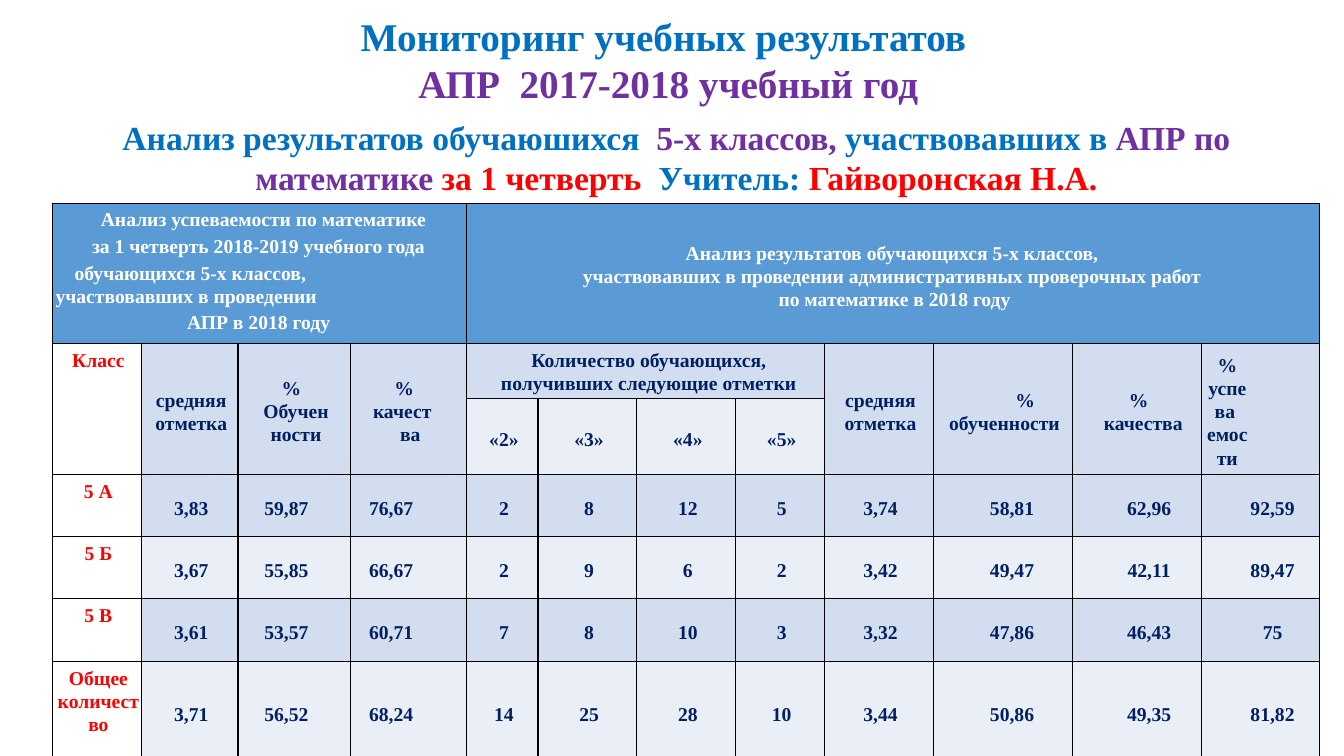
"""Builds the slide with the monitoring table of the fifth-form maths tests."""
from dataclasses import dataclass

from lxml.etree import SubElement
from pptx import Presentation
from pptx.dml.color import RGBColor as Rgb
from pptx.enum.text import MSO_ANCHOR as Anchor, MSO_AUTO_SIZE as AutoSize, PP_ALIGN as Align
from pptx.oxml.ns import qn
from pptx.util import Cm, Pt


@dataclass(frozen=True)
class Theme:
    font: str = "Times New Roman"
    title_size: int = 28
    subtitle_size: int = 24
    table_size: int = 14
    line_spacing: float = 1.07
    blue: str = "0070C0"
    purple: str = "7030A0"
    red: str = "FF0000"
    navy: str = "002060"
    white: str = "FFFFFF"
    header: str = "5B9BD5"
    dark_band: str = "D2DEEF"
    light_band: str = "EAEFF7"
    border: str = "000000"


@dataclass(frozen=True)
class Line:
    text: str
    align: Align = Align.CENTER
    left: float = 0
    first: float = 0
    right: float = 0
    after: float = 0
    spacing: float = Theme.line_spacing


class SlideBuilder:
    def __init__(self, slide, theme):
        self.slide = slide
        self.theme = theme

    def add_run(self, paragraph, text, size, color):
        run = paragraph.add_run()
        run.text = text
        run.font.name = self.theme.font
        run.font.size = Pt(size)
        run.font.bold = True
        run.font.color.rgb = Rgb.from_string(color)

    def fill_heading(self, heading, box, size, lines):
        heading.left, heading.top, heading.width, heading.height = map(Cm, box)
        frame = heading.text_frame
        frame.word_wrap = True
        frame.auto_size = AutoSize.SHAPE_TO_FIT_TEXT
        frame.vertical_anchor = Anchor.TOP
        for index, parts in enumerate(lines):
            paragraph = frame.add_paragraph() if index else frame.paragraphs[0]
            paragraph.alignment = Align.CENTER
            for text, color in parts:
                self.add_run(paragraph, text, size, color)

    def title(self, box, lines):
        self.fill_heading(self.slide.shapes.title, box, self.theme.title_size, lines)

    def subtitle(self, box, parts):
        heading = self.slide.shapes.add_textbox(*map(Cm, box))
        self.fill_heading(heading, box, self.theme.subtitle_size, [parts])

    def table(self, left, top, widths, heights):
        frame = self.slide.shapes.add_table(
            len(heights), len(widths), Cm(left), Cm(top), Cm(sum(widths)), Cm(sum(heights)))
        grid = frame.table
        for column, width in zip(grid.columns, widths):
            column.width = Cm(width)
        for row, height in zip(grid.rows, heights):
            row.height = Cm(height)
        for cell in grid.iter_cells():
            self.border(cell)
        return grid

    def border(self, cell):
        properties = cell._tc.get_or_add_tcPr()
        for side in ("a:lnL", "a:lnR", "a:lnT", "a:lnB"):
            edge = SubElement(properties, qn(side), w=str(Pt(1)))
            paint = SubElement(edge, qn("a:solidFill"))
            SubElement(paint, qn("a:srgbClr"), val=self.theme.border)

    def cell(self, cell, lines, fill, color, anchor=Anchor.MIDDLE):
        cell.fill.solid()
        cell.fill.fore_color.rgb = Rgb.from_string(fill)
        cell.vertical_anchor = anchor
        cell.margin_left, cell.margin_top = Cm(0.08), Cm(0.13)
        cell.margin_right = cell.margin_bottom = 0
        for index, line in enumerate(lines):
            paragraph = cell.text_frame.add_paragraph() if index else cell.text_frame.paragraphs[0]
            paragraph.alignment = line.align
            paragraph.line_spacing = line.spacing
            paragraph.space_after = Pt(line.after)
            properties = paragraph._p.get_or_add_pPr()
            for name, length in (("marL", line.left), ("marR", line.right), ("indent", line.first)):
                properties.set(name, str(Cm(length)))
            self.add_run(paragraph, line.text, self.theme.table_size, color)


WIDTHS = [2.24, 2.44, 2.84, 2.92, 1.8, 2.49, 2.49, 2.24, 2.74, 3.51, 3.25, 2.97]
HEIGHTS = [2.01, 1.12, 1.4, 1.57, 1.57, 1.57, 2.54]

PROGRESS = [
    Line("Анализ успеваемости по математике", Align.JUSTIFY, 2.13, -0.99, after=2.4, spacing=1.03),
    Line("за 1 четверть 2018-2019 учебного года ", after=2.6),
    Line("обучающихся 5-х классов,", Align.LEFT, 0.48),
    Line("участвовавших в проведении ", Align.JUSTIFY, after=1.8),
    Line("АПР в 2018 году "),
]
TEST_RESULTS = [
    Line("Анализ результатов обучающихся 5-х классов, "),
    Line("участвовавших в проведении административных проверочных работ "),
    Line("по математике в 2018 году"),
]
AVERAGE = [Line("средняя отметка")]
PERCENT = Line("%", Align.LEFT, 1.02)
TALL_HEADERS = {
    1: AVERAGE,
    2: [PERCENT, Line("Обучен"), Line("ности")],
    3: [PERCENT, Line("качест", Align.LEFT, 0.48), Line("ва")],
    8: AVERAGE,
    9: [Line("%", left=1.04), Line("обученности")],
    10: [Line("%"), Line("качества", left=0.23)],
    11: [Line(text, right=1.75) for text in ("%", "успева ", "емости")],
}
MARKS = ["«2»", "«3»", "«4»", "«5»"]
VALUE_LAYOUT = {
    2: {"align": Align.LEFT, "left": 0.58},
    3: {"align": Align.LEFT, "left": 0.38},
    9: {"left": 0.38},
    10: {"left": 0.53},
    11: {"left": 0.53},
}
RESULTS = [
    ("5 А", "3,83", "59,87", "76,67", "2", "8", "12", "5", "3,74", "58,81", "62,96", "92,59"),
    ("5 Б", "3,67", "55,85", "66,67", "2", "9", "6", "2", "3,42", "49,47", "42,11", "89,47"),
    ("5 В", "3,61", "53,57", "60,71", "7", "8", "10", "3", "3,32", "47,86", "46,43", "75"),
    ("Общее количество", "3,71", "56,52", "68,24", "14", "25", "28", "10", "3,44", "50,86",
     "49,35", "81,82"),
]


def fill_results(builder, grid):
    theme = builder.theme
    for first, last, lines in ((0, 3, PROGRESS), (4, 11, TEST_RESULTS)):
        grid.cell(0, first).merge(grid.cell(0, last))
        anchor = Anchor.MIDDLE if first else Anchor.TOP
        builder.cell(grid.cell(0, first), lines, theme.header, theme.white, anchor)
    for column in (0, *TALL_HEADERS):
        grid.cell(1, column).merge(grid.cell(2, column))
    builder.cell(grid.cell(1, 0), [Line("Класс")], theme.white, theme.red, Anchor.TOP)
    for column, lines in TALL_HEADERS.items():
        builder.cell(grid.cell(1, column), lines, theme.dark_band, theme.navy)
    grid.cell(1, 4).merge(grid.cell(1, 7))
    mark_counts = [Line("Количество обучающихся, получивших следующие отметки", left=0.08)]
    builder.cell(grid.cell(1, 4), mark_counts, theme.dark_band, theme.navy, Anchor.TOP)
    for column, mark in enumerate(MARKS, 4):
        builder.cell(grid.cell(2, column), [Line(mark)], theme.light_band, theme.navy)
    for row, (group, *values) in enumerate(RESULTS, 3):
        builder.cell(grid.cell(row, 0), [Line(group)], theme.white, theme.red, Anchor.TOP)
        band = theme.dark_band if row % 2 else theme.light_band
        for column, value in enumerate(values, 1):
            line = Line(value, **VALUE_LAYOUT.get(column, {}))
            builder.cell(grid.cell(row, column), [line], band, theme.navy)


def main():
    deck = Presentation()
    deck.slide_width, deck.slide_height = Cm(33.87), Cm(19.05)
    theme = Theme()
    builder = SlideBuilder(deck.slides.add_slide(deck.slide_layouts[5]), theme)
    builder.title((2.34, 0.18, 29, 2.64), [
        [("Мониторинг учебных результатов ", theme.blue)],
        [("АПР  2017-2018 учебный год", theme.purple)],
    ])
    builder.subtitle((2.34, 2.82, 29.41, 2.31), [
        ("Анализ результатов обучаюшихся  ", theme.blue),
        ("5-х классов, ", theme.purple),
        ("участвовавших в ", theme.blue),
        ("АПР по математике ", theme.purple),
        ("за 1 четверть  ", theme.red),
        ("Учитель: ", theme.blue),
        ("Гайворонская Н.А.", theme.red),
    ])
    fill_results(builder, builder.table(1.32, 5.13, WIDTHS, HEIGHTS))
    deck.save("out.pptx")


if __name__ == "__main__":
    main()
